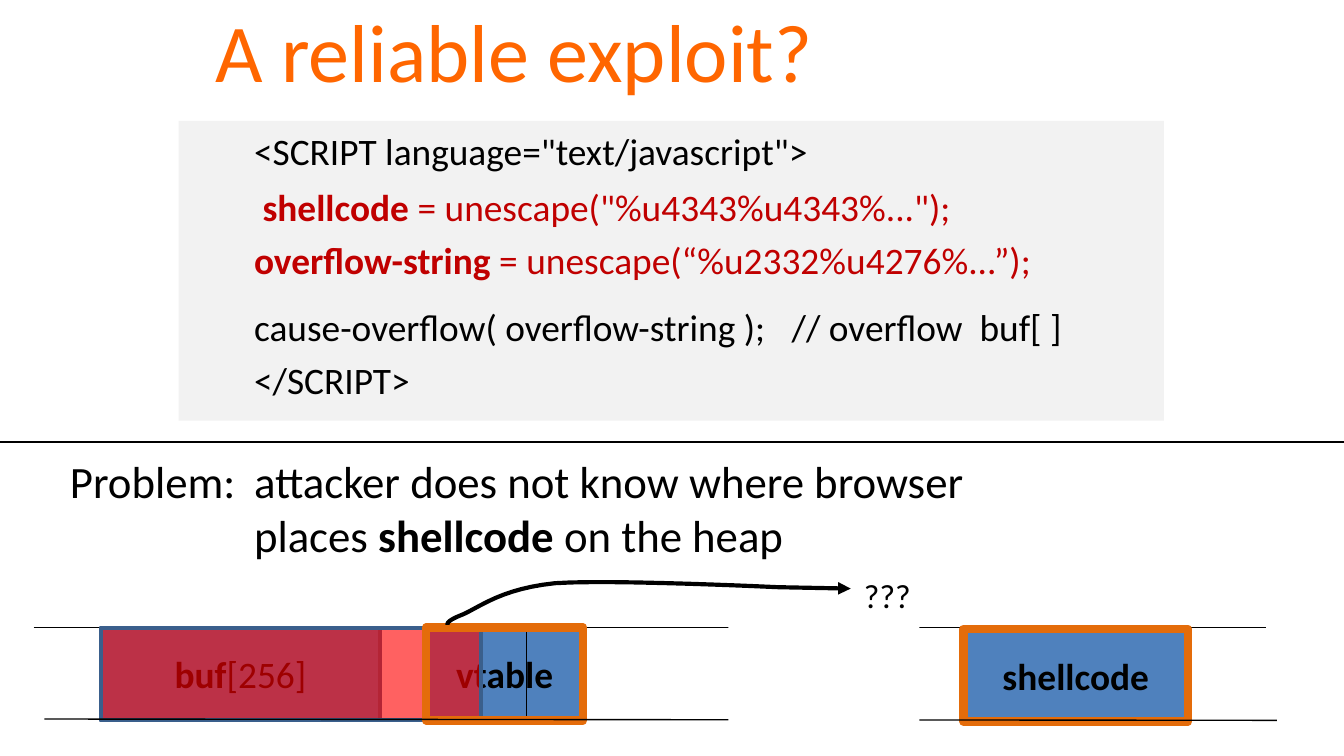
from lxml import etree
from pptx import Presentation
from pptx.dml.color import RGBColor
from pptx.enum.shapes import MSO_CONNECTOR, MSO_SHAPE
from pptx.enum.text import MSO_ANCHOR, MSO_AUTO_SIZE, PP_ALIGN
from pptx.oxml.ns import qn
from pptx.util import Inches, Pt

COLORS = {
    "title": "FF6600", "text": "000000", "attack": "C00000",
    "panel": "F2F2F2", "memory": "4F81BD", "memory_edge": "3A5F8C",
    "overflow": "FF0000", "highlight": "E46C0A", "gap": "FFFFFF",
}
FONT = "Calibri"
CODE_INDENT = 1.37
MEMORY_TOP, MEMORY_HEIGHT = 4.67, 0.69
VTABLE = (3.17, MEMORY_TOP, 1.17, MEMORY_HEIGHT)
SHELLCODE = (7.17, 4.68, 1.67, MEMORY_HEIGHT)


def rgb(name):
    return RGBColor.from_string(COLORS[name])


def write(paragraph, text, size=20, color="text", bold=False):
    """Add text in one format; a vertical tab in it starts a new line."""
    for index, line in enumerate(text.split("\v")):
        if index:
            paragraph.add_line_break()
            etree.SubElement(paragraph._p[-1], qn("a:rPr"), sz=str(size * 100))
        run = paragraph.add_run()
        run.text = line
        run.font.name, run.font.size, run.font.bold = FONT, Pt(size), bold
        run.font.color.rgb = rgb(color)


def place(shape, left, top, width, height):
    shape.left, shape.top = Inches(left), Inches(top)
    shape.width, shape.height = Inches(width), Inches(height)


def add_box(slide, area, fill=None, edge=None, edge_width=2, alpha=None, label=()):
    """Add a rectangle; label is a list of (text, bold) pairs."""
    box = slide.shapes.add_shape(MSO_SHAPE.RECTANGLE, *map(Inches, area))
    box.shadow.inherit = False
    if fill:
        box.fill.solid()
        box.fill.fore_color.rgb = rgb(fill)
    else:
        box.fill.background()
    if alpha:
        color = box._element.spPr.find(qn("a:solidFill"))[0]
        etree.SubElement(color, qn("a:alpha"), val=str(alpha * 1000))
    if edge:
        box.line.color.rgb = rgb(edge)
        box.line.width = Pt(edge_width)
    else:
        box.line.fill.background()
    if label:
        box.text_frame.vertical_anchor = MSO_ANCHOR.MIDDLE
        paragraph = box.text_frame.paragraphs[0]
        paragraph.alignment = PP_ALIGN.CENTER
        for text, bold in label:
            write(paragraph, text, bold=bold)
    return box


def add_rule(slide, *ends):
    rule = slide.shapes.add_connector(MSO_CONNECTOR.STRAIGHT, *map(Inches, ends))
    rule.line.color.rgb = rgb("text")
    rule.line.width = Pt(0.75)
    etree.SubElement(rule._element.spPr, qn("a:effectLst"))


def bezier(start, control1, control2, end, steps=12):
    """Return points on a cubic curve, without its start."""
    points = []
    for step in range(1, steps + 1):
        t = step / steps
        weights = ((1 - t) ** 3, 3 * t * (1 - t) ** 2, 3 * t * t * (1 - t), t ** 3)
        points.append(tuple(
            sum(w * p[axis] for w, p in zip(weights, (start, control1, control2, end)))
            for axis in (0, 1)))
    return points


def add_pointer(slide):
    points = [(3.33, 4.65)]
    curves = [
        ((3.33, 4.64), (3.32, 4.62), (3.45, 4.57)),
        ((3.58, 4.51), (3.74, 4.38), (4.13, 4.34)),
        ((4.53, 4.31), (5.8, 4.37), (5.8, 4.37)),
    ]
    for curve in curves:
        points += bezier(points[-1], *curve)
    points.append((6.33, 4.38))
    start, *rest = [(Inches(x), Inches(y)) for x, y in points]
    builder = slide.shapes.build_freeform(*start)
    builder.add_line_segments(rest, close=False)
    pointer = builder.convert_to_shape()
    pointer.shadow.inherit = False
    pointer.fill.background()
    pointer.line.color.rgb = rgb("text")
    pointer.line.width = Pt(2.25)
    outline = pointer._element.spPr.find(qn("a:ln"))
    etree.SubElement(outline, qn("a:tailEnd"), type="triangle")


def add_title(slide):
    title = slide.shapes.title
    place(title, 0.5, -0.1, 9, 0.94)
    frame = title.text_frame
    frame.margin_left = Inches(1.1)
    frame.vertical_anchor = MSO_ANCHOR.MIDDLE
    frame.auto_size = MSO_AUTO_SIZE.NONE
    frame.paragraphs[0].alignment = PP_ALIGN.LEFT
    write(frame.paragraphs[0], "A reliable exploit?", size=44, color="title")


def add_body_line(frame, runs, space_before, hanging=0, **style):
    first = frame.paragraphs[0]
    paragraph = frame.add_paragraph() if first.runs else first
    paragraph.space_before = Pt(space_before)
    properties = paragraph._p.get_or_add_pPr()
    properties.set("marL", str(Inches(CODE_INDENT)))
    properties.set("indent", str(-Inches(hanging)))
    etree.SubElement(properties, qn("a:buNone"))
    for text, bold in runs:
        write(paragraph, text, bold=bold, **style)
    return paragraph


def add_body(slide):
    body = slide.placeholders[1]
    place(body, 0.42, 0.73, 9, 4.44)
    frame = body.text_frame
    frame.auto_size = MSO_AUTO_SIZE.NONE
    frame.margin_top = Inches(0.22)
    add_body_line(frame, [('<SCRIPT language="text/javascript">', False)], 0)
    add_body_line(frame, [(" ", False), ("shellcode", True),
                          (' = unescape("%u4343%u4343%...");', False)], 6.5, color="attack")
    add_body_line(frame, [("overflow-string", True),
                          (" = unescape(“%u2332%u4276%...”);", False)], 4, color="attack")
    call = add_body_line(frame, [("cause-overflow( overflow-string );\t"
                                  "// overflow  buf[ ]", False)], 12.2)
    tabs = etree.SubElement(call._p.pPr, qn("a:tabLst"))
    etree.SubElement(tabs, qn("a:tab"), pos=str(Inches(4.3)), algn="l")
    add_body_line(frame, [("</SCRIPT>", False)], 4)
    add_body_line(frame, [("Problem:\tattacker does not know where browser \vplaces ", False),
                          ("shellcode", True), (" on the heap", False)],
                  28, hanging=CODE_INDENT, size=24)


def add_memory(slide):
    bottom = MEMORY_TOP + MEMORY_HEIGHT
    block = {"fill": "memory", "edge": "memory_edge"}
    add_box(slide, (0.75, MEMORY_TOP, 2.08, MEMORY_HEIGHT), **block,
            label=[("buf", True), ("[256]", False)])
    add_box(slide, SHELLCODE, **block, label=[("shellcode", True)])
    add_rule(slide, 0.25, MEMORY_TOP, 9.42, MEMORY_TOP)
    add_box(slide, VTABLE, **block, label=[("vtable", True)])
    for x in (3.58, 3.92):
        add_rule(slide, x, MEMORY_TOP, x, bottom)
    add_box(slide, (0.75, MEMORY_TOP, 2.83, MEMORY_HEIGHT), "overflow", "memory_edge", alpha=62)
    for area in (SHELLCODE, VTABLE):
        add_box(slide, area, edge="highlight", edge_width=4.5)
    add_rule(slide, 0.33, 5.35, 9.5, bottom)
    add_box(slide, (5.42, 4.6, 1.42, 0.88), "gap")


def add_unknown_target(slide):
    target = slide.shapes.add_textbox(*map(Inches, (6.33, 4.23, 0.55, 0.4)))
    target.text_frame.word_wrap = False
    target.text_frame.auto_size = MSO_AUTO_SIZE.SHAPE_TO_FIT_TEXT
    write(target.text_frame.paragraphs[0], "???", size=18)


def main():
    deck = Presentation()
    deck.slide_width = Inches(10)
    deck.slide_height = deck.slide_width * 9 // 16
    slide = deck.slides.add_slide(deck.slide_layouts[1])
    code_panel = add_box(slide, (1.33, 0.9, 7.33, 2.23), "panel")
    slide.shapes._spTree.insert(2, code_panel._element)
    add_title(slide)
    add_body(slide)
    add_memory(slide)
    add_pointer(slide)
    add_unknown_target(slide)
    add_rule(slide, 0, 3.29, 10, 3.29)
    deck.save("out.pptx")


if __name__ == "__main__":
    main()
